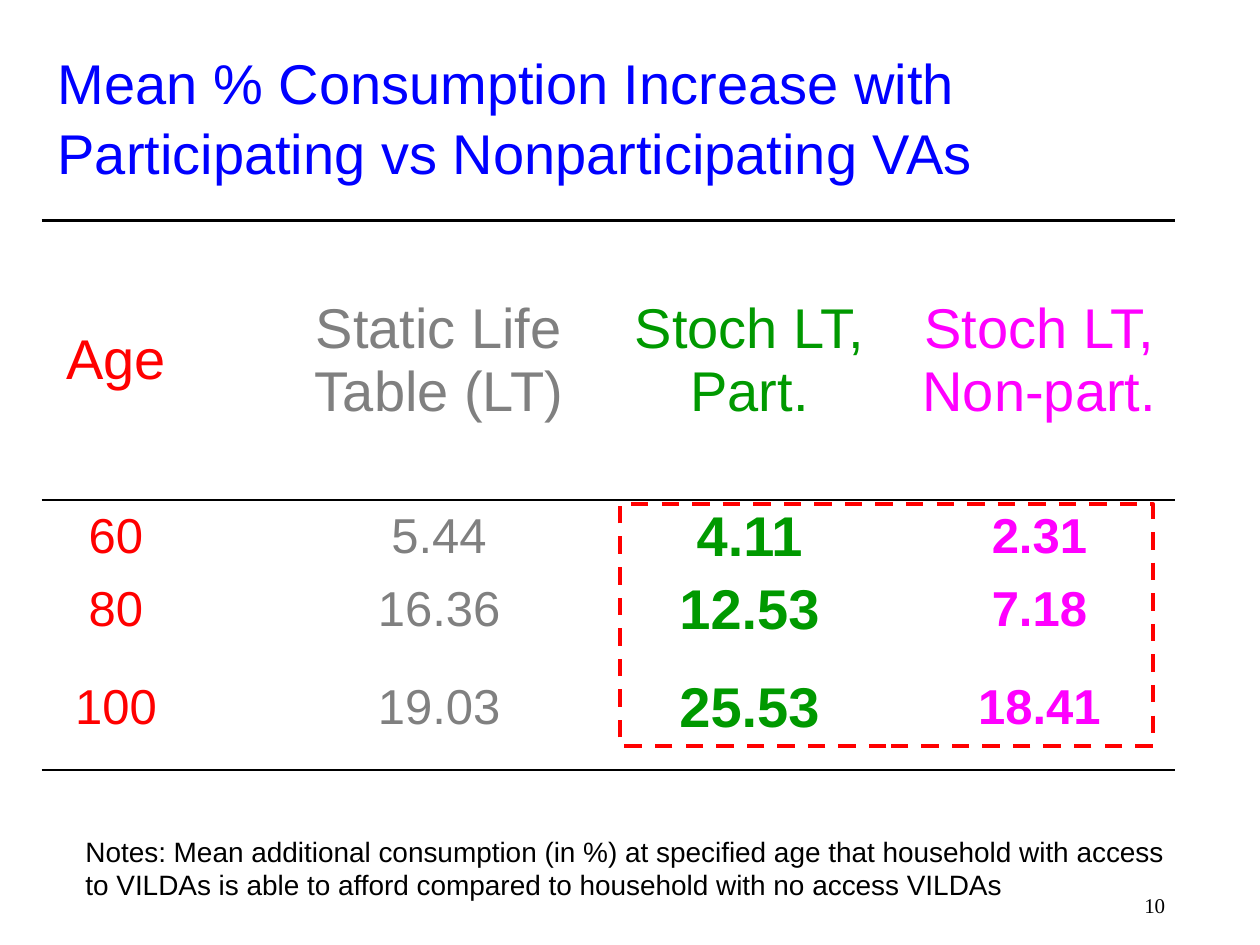
import pptx
import pptx.dml.color
import pptx.enum.dml
import pptx.enum.shapes
import pptx.enum.text
import pptx.oxml
import pptx.oxml.ns
import pptx.util
from dataclasses import dataclass

COLORS = {"blue": "0000FF", "black": "000000", "red": "FF0000",
          "gray": "808080", "green": "009900", "pink": "FF00FF"}
ALIGN = pptx.enum.text.PP_ALIGN
ANCHOR = pptx.enum.text.MSO_ANCHOR


@dataclass
class Box:
    """Place and size in percent of the slide."""
    left: float
    top: float
    width: float
    height: float

    def place(self) -> tuple:
        return wide(self.left), tall(self.top), wide(self.width), tall(self.height)


@dataclass
class Style:
    size: float
    color: str
    bold: bool = False
    face: str = "Arial"


@dataclass
class Label:
    text: str
    box: Box
    style: Style
    align: ALIGN = ALIGN.LEFT
    anchor: ANCHOR = ANCHOR.TOP
    space: float = 1.0


@dataclass
class Column:
    width: float
    texts: tuple = ()
    style: Style | None = None


deck = pptx.Presentation()
deck.slide_width = pptx.util.Inches(10)
deck.slide_height = pptx.util.Inches(7.5)
slide = deck.slides.add_slide(deck.slide_layouts[6])


def wide(share: float) -> int:
    return int(deck.slide_width * share / 100)


def tall(share: float) -> int:
    return int(deck.slide_height * share / 100)


def rgb(name: str) -> pptx.dml.color.RGBColor:
    return pptx.dml.color.RGBColor.from_string(COLORS[name])


def write(para, text: str, style: Style, align: ALIGN) -> None:
    para.text = text
    para.alignment = align
    font = para.font
    font.name, font.size, font.bold = style.face, pptx.util.Pt(style.size), style.bold
    font.color.rgb = rgb(style.color)


def draw_label(label: Label) -> None:
    frame = slide.shapes.add_textbox(*label.box.place()).text_frame
    frame.word_wrap = True
    frame.vertical_anchor = label.anchor
    para = frame.paragraphs[0]
    write(para, label.text, label.style, label.align)
    para.line_spacing = label.space


def rule_cell(cell, top: float, base: float) -> None:
    """Set the cell's edges; a width of 0 hides an edge."""
    props = cell._tc.get_or_add_tcPr()
    edges = {"lnL": 0, "lnR": 0, "lnT": top, "lnB": base}
    for spot, (tag, width) in enumerate(edges.items()):
        fill = (f'<a:solidFill><a:srgbClr val="{COLORS["black"]}"/></a:solidFill>'
                if width else "<a:noFill/>")
        props.insert(spot, pptx.oxml.parse_xml(
            f'<a:{tag} {pptx.oxml.ns.nsdecls("a")} w="{int(width * 12700)}">'
            f"{fill}</a:{tag}>"))


def draw_table(left: float, top: float, cols: list[Column], rows: list[float],
               rules: list[float]) -> None:
    box = Box(left, top, sum(col.width for col in cols), sum(rows))
    table = slide.shapes.add_table(len(rows), len(cols), *box.place()).table
    table.first_row = table.horz_banding = False
    for r, height in enumerate(rows):
        table.rows[r].height = tall(height)
    for c, col in enumerate(cols):
        table.columns[c].width = wide(col.width)
        for r in range(len(rows)):
            cell = table.cell(r, c)
            cell.fill.background()
            cell.vertical_anchor = ANCHOR.MIDDLE
            cell.margin_left = cell.margin_right = pptx.util.Inches(0.07)
            cell.margin_top = cell.margin_bottom = 0
            rule_cell(cell, rules[r], rules[r + 1])
            if col.style:
                style = col.style if r else Style(32, col.style.color)
                write(cell.text_frame.paragraphs[0], col.texts[r], style, ALIGN.CENTER)


def draw_frame(box: Box, color: str, width: float) -> None:
    kind = pptx.enum.shapes.MSO_SHAPE.RECTANGLE
    shape = slide.shapes.add_shape(kind, *box.place())
    shape.shadow.inherit = False
    shape.fill.background()
    shape.line.color.rgb = rgb(color)
    shape.line.width = pptx.util.Pt(width)
    shape.line.dash_style = pptx.enum.dml.MSO_LINE.DASH


# Title
draw_label(Label("Mean % Consumption Increase with Participating vs Nonparticipating VAs",
                 Box(3.6, 4.4, 90, 15.6), Style(32, "blue"),
                 anchor=ANCHOR.MIDDLE, space=1.05))

# Results by age; rules run above each row and below the last
columns = [
    Column(11.8, ("Age", "60", "80", "100"), Style(28, "red")),
    Column(7.3),
    Column(24.9, ("Static Life Table (LT)", "5.44", "16.36", "19.03"), Style(28, "gray")),
    Column(24.4, ("Stoch LT, Part.", "4.11", "12.53", "25.53"), Style(32, "green", True)),
    Column(21.6, ("Stoch LT, Non-part.", "2.31", "7.18", "18.41"), Style(28, "pink", True)),
]
draw_table(3.3, 23.33, columns, rows=[29.6, 7.73, 7.73, 13.07], rules=[1.5, 1, 0, 0, 1.5])

# Notes and page number
draw_label(Label("Notes: Mean additional consumption (in %) at specified age that household "
                 "with access to VILDAs is able to afford compared to household with no "
                 "access VILDAs", Box(5.8, 87.6, 90, 8.53), Style(16, "black")))
draw_label(Label("10", Box(88.3, 91.07, 6.7, 6.67),
                 Style(12, "black", face="Times New Roman"), ALIGN.CENTER, ANCHOR.BOTTOM))

# Highlight around the stochastic results
draw_frame(Box(49.2, 53.33, 42.3, 25.6), "red", 2.5)

deck.save("out.pptx")
